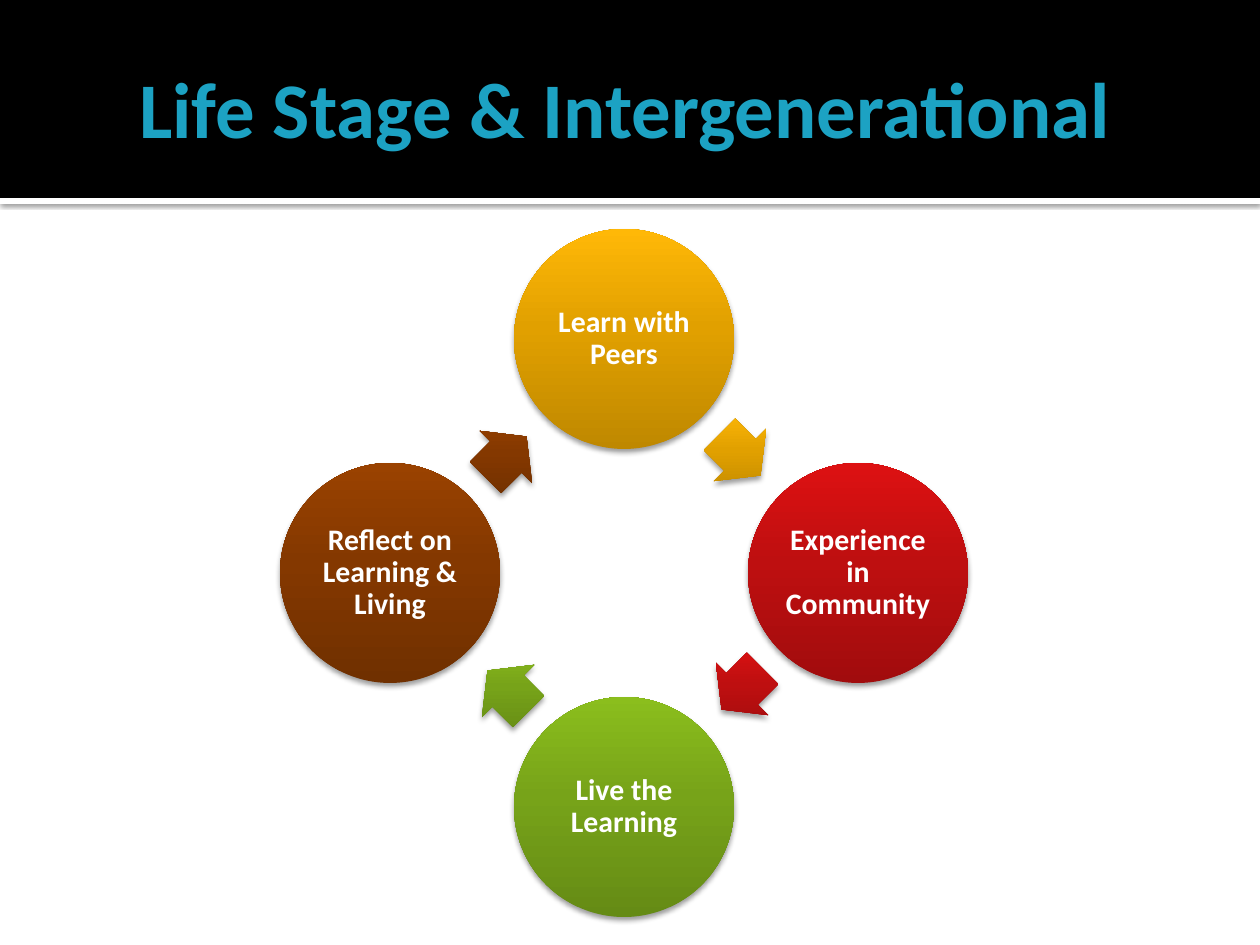
from math import cos, sin, radians
from lxml import etree
from pptx import Presentation, util as u
from pptx.dml.color import RGBColor
from pptx.enum import shapes, text
from pptx.oxml.ns import qn

TITLE = "Life Stage & Intergenerational "
STAGES = [
    ("Learn with Peers", ("BF8800", "E1A000", "FFB807")),
    ("Experience in Community", ("A10C0D", "BE0F10", "DD1112")),
    ("Live the Learning", ("658B15", "77A319", "8BBE1D")),
    ("Reflect on Learning & Living", ("703000", "843800", "9A4200")),
]
STOPS = (0, 55, 100)
FONT = "Calibri"
BLACK = RGBColor(0x00, 0x00, 0x00)
WHITE = RGBColor(0xFF, 0xFF, 0xFF)
TEAL = RGBColor(0x1C, 0xA2, 0xC3)

CENTER_X, CENTER_Y, RADIUS = 624, 573, 234
CIRCLE = 220
ARROW_W, ARROW_H = 58, 74
ARROW_BACK = 1


def px(n):
    return u.Emu(round(n * 914400 / 126))


def add_shape(s, kind, x, y, w, h):
    sp = s.shapes.add_shape(kind, px(x), px(y), px(w), px(h))
    sp.line.fill.background()
    sp.shadow.inherit = False
    return sp


def add_centered(s, kind, cx, cy, w, h):
    return add_shape(s, kind, cx - w / 2, cy - h / 2, w, h)


def add_color(parent, color, alpha=None):
    clr = etree.SubElement(parent, qn("a:srgbClr"), val=color)
    if alpha is not None:
        etree.SubElement(clr, qn("a:alpha"), val=str(alpha * 1000))


def set_shadow(sp, alpha, blur, dist):
    effects = sp._element.spPr.find(qn("a:effectLst"))
    shadow = etree.SubElement(
        effects, qn("a:outerShdw"), blurRad=str(u.Pt(blur)),
        dist=str(u.Pt(dist)), dir="5400000", rotWithShape="0")
    add_color(shadow, "000000", alpha)


def set_gradient(sp, colors):
    sp.fill.gradient()
    sp.fill.gradient_angle = 90
    grad = sp._element.spPr.find(qn("a:gradFill"))
    grad.set("rotWithShape", "0")
    stops = grad.find(qn("a:gsLst"))
    for old in list(stops):
        stops.remove(old)
    for pos, color in zip(STOPS, colors):
        add_color(etree.SubElement(stops, qn("a:gs"), pos=str(pos * 1000)), color)


def write(tf, content, size, color, insets):
    tf.word_wrap = True
    tf.auto_size = text.MSO_AUTO_SIZE.NONE
    tf.vertical_anchor = text.MSO_ANCHOR.MIDDLE
    tf.margin_left, tf.margin_top, tf.margin_right, tf.margin_bottom = map(px, insets)
    p = tf.paragraphs[0]
    p.alignment = text.PP_ALIGN.CENTER
    r = p.add_run()
    r.text = content
    r.font.name, r.font.size, r.font.bold = FONT, u.Pt(size), True
    r.font.color.rgb = color
    return p


def ring_point(i):
    a = radians(90 * i - 90)
    return CENTER_X + RADIUS * cos(a), CENTER_Y + RADIUS * sin(a)


def main():
    prs = Presentation()
    prs.slide_width, prs.slide_height = u.Inches(10), u.Inches(7.5)
    s = prs.slides.add_slide(prs.slide_layouts[5])

    title = s.shapes.title
    for y, h, color in ((198, 6, WHITE), (0, 198, BLACK)):
        band = add_shape(s, shapes.MSO_SHAPE.RECTANGLE, 0, y, 1260, h)
        band.fill.solid()
        band.fill.fore_color.rgb = color
        if color == WHITE:
            set_shadow(band, 60, 2.5, 0.8)

    s.shapes._spTree.append(title._element)
    title.left, title.top, title.width, title.height = map(px, (63, 21, 1134, 173))
    write(title.text_frame, TITLE, 45, TEAL, (13, 6, 6, 6))

    for i, (label, colors) in enumerate(STAGES):
        x, y = ring_point(i)
        next_x, next_y = ring_point(i + 1)
        circle = add_centered(s, shapes.MSO_SHAPE.OVAL, x, y, CIRCLE, CIRCLE)
        p = write(circle.text_frame, label, 17, WHITE, (2, 2, 2, 2))
        p.line_spacing = 0.9

        turn = 45 + 90 * i
        step_x = ARROW_BACK if next_x > x else -ARROW_BACK
        step_y = ARROW_BACK if next_y > y else -ARROW_BACK
        arrow = add_centered(
            s, shapes.MSO_SHAPE.RIGHT_ARROW, (x + next_x) / 2 - step_x,
            (y + next_y) / 2 - step_y, ARROW_W, ARROW_H)
        arrow.adjustments[0], arrow.adjustments[1] = 0.6, 0.5
        arrow.rotation = turn

        for sp in (circle, arrow):
            set_gradient(sp, colors)
            set_shadow(sp, 38, 3.1, 2)

    prs.save("out.pptx")


if __name__ == "__main__":
    main()
